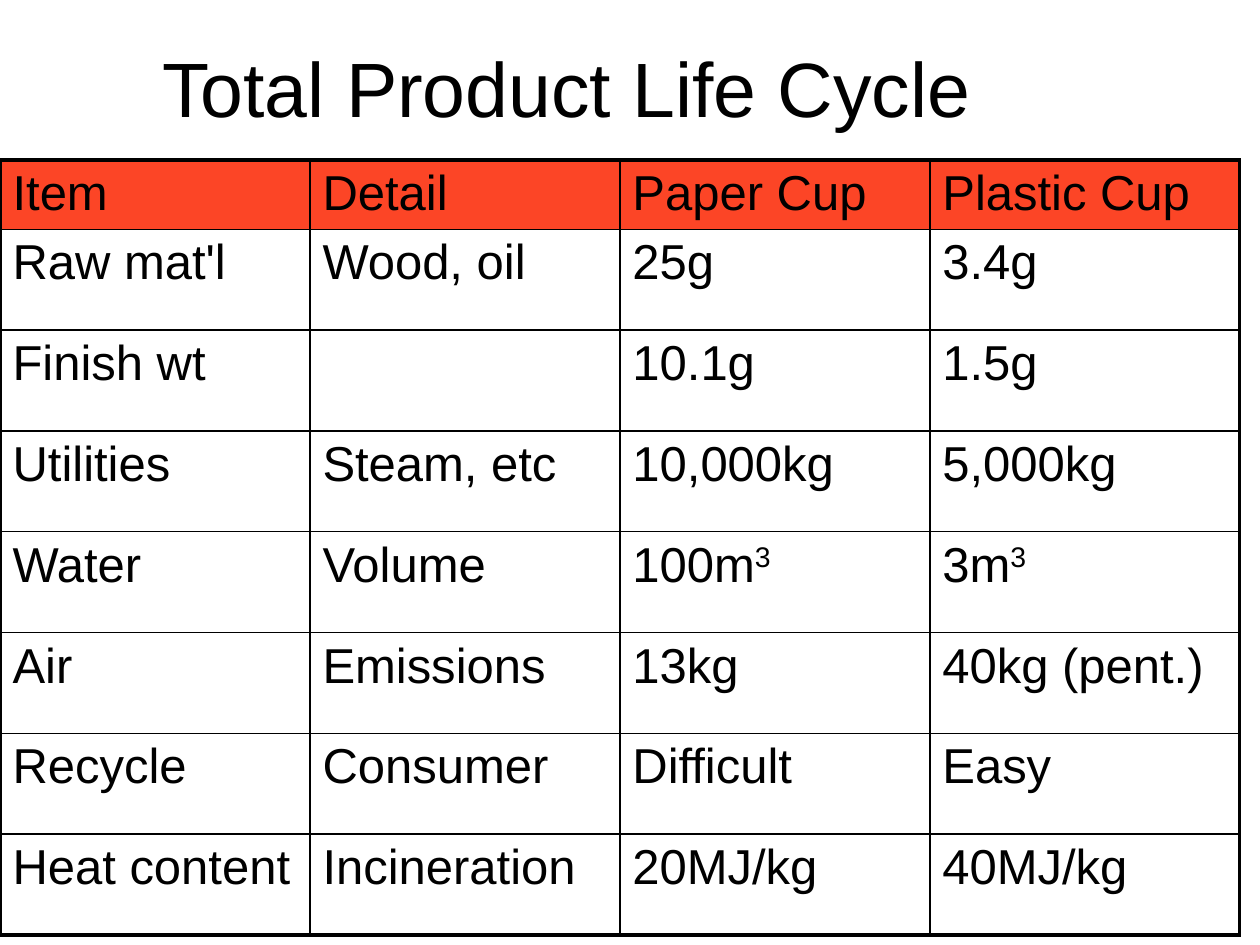
import pptx
import pptx.util
from pptx.dml.color import RGBColor
from pptx.enum.text import MSO_ANCHOR, PP_ALIGN
from pptx.oxml import parse_xml
from pptx.oxml.ns import nsdecls
from pptx.util import Inches

BLACK = RGBColor(0x00, 0x00, 0x00)
WHITE = RGBColor(0xFF, 0xFF, 0xFF)
HEADER_RED = RGBColor(0xFC, 0x45, 0x26)
FONT_NAME = "Arial"
INNER_BORDER, OUTER_BORDER = 1, 2.25
COLUMN_WIDTH, HEADER_HEIGHT, ROW_HEIGHT = 2.46, 0.55, 0.8

# A caret marks the start of a superscript
ROWS = [
    ["Item", "Detail", "Paper Cup", "Plastic Cup"],
    ["Raw mat'l", "Wood, oil", "25g", "3.4g"],
    ["Finish wt", "", "10.1g", "1.5g"],
    ["Utilities", "Steam, etc", "10,000kg", "5,000kg"],
    ["Water", "Volume", "100m^3", "3m^3"],
    ["Air", "Emissions", "13kg", "40kg (pent.)"],
    ["Recycle", "Consumer", "Difficult", "Easy"],
    ["Heat content", "Incineration", "20MJ/kg", "40MJ/kg"],
]


def style_paragraph(paragraph, size):
    paragraph.font.name = FONT_NAME
    paragraph.font.size = pptx.util.Pt(size)
    paragraph.font.color.rgb = BLACK


def add_title(slide, text):
    shape = slide.shapes.add_textbox(Inches(0), Inches(0.25), Inches(9), Inches(0.87))
    frame = shape.text_frame
    frame.word_wrap = True
    frame.vertical_anchor = MSO_ANCHOR.MIDDLE
    paragraph = frame.paragraphs[0]
    paragraph.text = text
    paragraph.alignment = PP_ALIGN.CENTER
    style_paragraph(paragraph, 44)


def write_cell(cell, text):
    paragraph = cell.text_frame.paragraphs[0]
    base, _, superscript = text.partition("^")
    if base:
        paragraph.add_run().text = base
    if superscript:
        run = paragraph.add_run()
        run.text = superscript
        run.font._element.set("baseline", "30000")
    style_paragraph(paragraph, 28)


def set_borders(cell, outer_sides):
    """Draw all four edges, heavier where the cell meets the table's edge."""
    properties = cell._tc.get_or_add_tcPr()
    for index, side in enumerate("LRTB"):
        points = OUTER_BORDER if side in outer_sides else INNER_BORDER
        properties.insert(index, parse_xml(
            f'<a:ln{side} {nsdecls("a")} w="{pptx.util.Pt(points)}"><a:solidFill>'
            f'<a:srgbClr val="{BLACK}"/></a:solidFill></a:ln{side}>'))


def add_table(slide, rows):
    row_count, column_count = len(rows), len(rows[0])
    height = HEADER_HEIGHT + ROW_HEIGHT * (row_count - 1)
    table = slide.shapes.add_table(
        row_count, column_count, Inches(0), Inches(1.27),
        Inches(COLUMN_WIDTH * column_count), Inches(height)).table
    table.first_row = False
    table.horz_banding = False
    for column in table.columns:
        column.width = Inches(COLUMN_WIDTH)
    for row_index, texts in enumerate(rows):
        is_header = row_index == 0
        table.rows[row_index].height = Inches(HEADER_HEIGHT if is_header else ROW_HEIGHT)
        for column_index, text in enumerate(texts):
            cell = table.cell(row_index, column_index)
            write_cell(cell, text)
            cell.fill.solid()
            cell.fill.fore_color.rgb = HEADER_RED if is_header else WHITE
            at_edge = {"L": column_index == 0, "R": column_index == column_count - 1,
                       "T": is_header, "B": row_index == row_count - 1}
            set_borders(cell, [side for side, outer in at_edge.items() if outer])


def main():
    presentation = pptx.Presentation()
    presentation.slide_width = Inches(10)
    presentation.slide_height = Inches(7.5)
    slide = presentation.slides.add_slide(presentation.slide_layouts[6])
    # Comparison table, then the heading above it
    add_table(slide, ROWS)
    add_title(slide, "Total Product Life Cycle")
    presentation.save("out.pptx")


if __name__ == "__main__":
    main()
